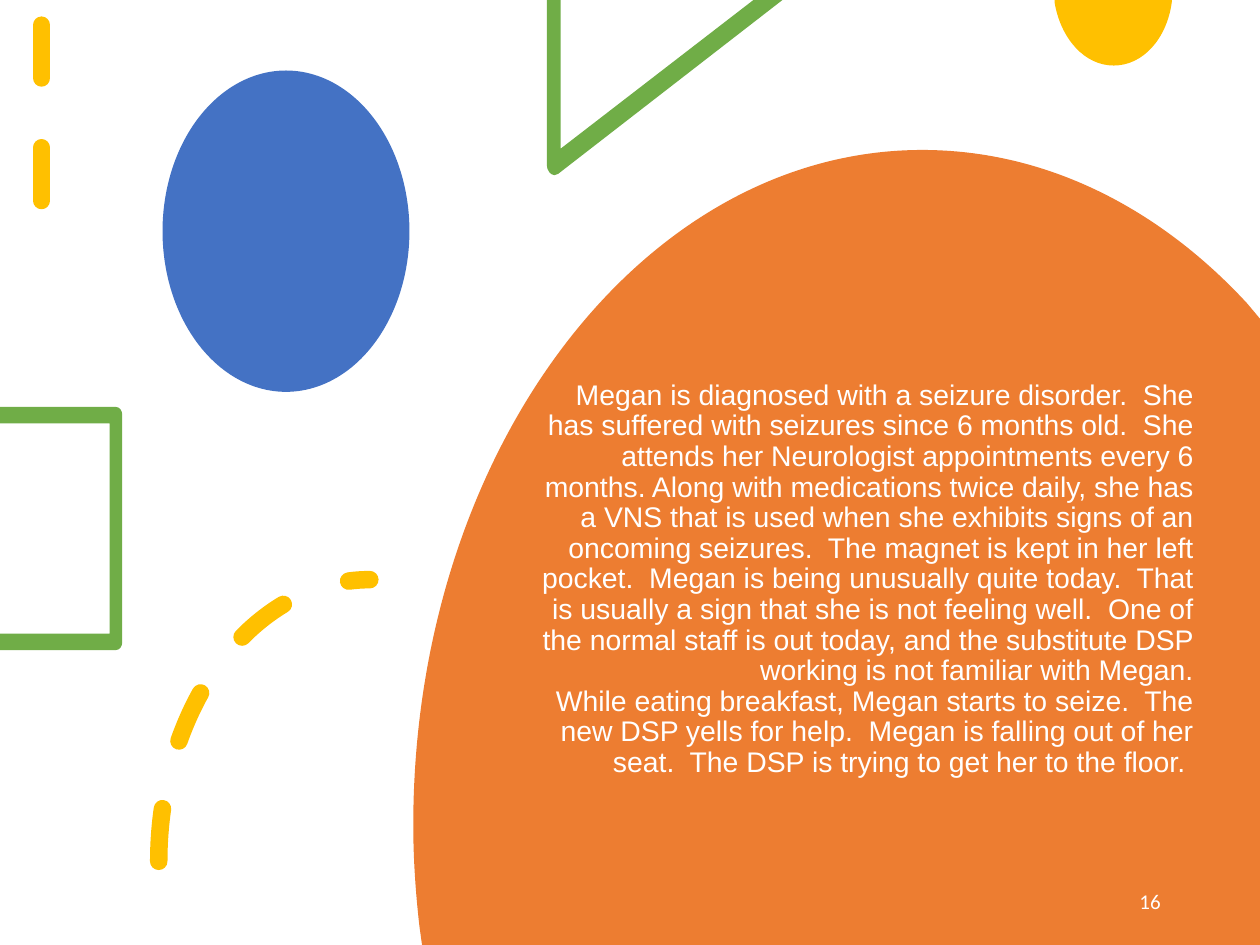
import pptx
import pptx.util
import pptx.dml.color
import pptx.enum.dml
import pptx.enum.shapes
import pptx.enum.text
import pptx.oxml
import pptx.oxml.ns
import lxml.etree

ORANGE = pptx.dml.color.RGBColor(0xED, 0x7D, 0x31)
GOLD = pptx.dml.color.RGBColor(0xFF, 0xC0, 0x00)
GREEN = pptx.dml.color.RGBColor(0x70, 0xAD, 0x47)
BLUE = pptx.dml.color.RGBColor(0x44, 0x72, 0xC4)
WHITE = pptx.dml.color.RGBColor(0xFF, 0xFF, 0xFF)

COLS, ROWS = 100, 75
CELL = pptx.util.Inches(0.1)
KIND = pptx.enum.shapes.MSO_SHAPE
ANCHOR = pptx.enum.text.MSO_ANCHOR

STORY = (
    ("Megan is diagnosed with a seizure disorder.  She has suffered with seizures since 6 months old.  "
     "She attends her Neurologist appointments every 6 months. Along with medications twice daily, "
     "she has a VNS that is used when she exhibits signs of an oncoming seizures.  The magnet is kept "
     "in her left pocket.  Megan is being unusually quite today.  That is usually a sign that she is "
     "not feeling well.  One of the normal staff is out today, and the substitute DSP working is not "
     "familiar with Megan."),
    ("While eating breakfast, Megan starts to seize.  The new DSP yells for help.  Megan is falling "
     "out of her seat.  The DSP is trying to get her to the floor. "),
)

DISC = [(73.2, 11.9), (83, 11.9, 92, 16.5, 99, 24.1), (100, 25.3), (100, 75),
        (33.5, 75), (33.3, 73.6), (33, 71, 32.8, 68.2, 32.8, 65.5),
        (32.8, 35.9, 50.9, 11.9, 73.2, 11.9)]
WEDGE = [(43.4, 0), (44.5, 0), (44.5, 11.8), (59.8, 0), (62.1, 0), (44.3, 13.8),
         (44.2, 13.8, 44.1, 13.9, 44, 13.9), (43.7, 13.9, 43.4, 13.5, 43.4, 13.1)]
DROP = [(83.7, 0), (93, 0), (93, 0.2), (92.6, 3.1, 90.7, 5.2, 88.4, 5.2),
        (86.1, 5.2, 84.2, 3.1, 83.7, 0.2)]
FRAME = [(9.2, 32.3), (0, 32.3), (0, 33.6), (8.7, 33.6), (8.7, 50.3), (0, 50.3),
         (0, 51.6), (9.2, 51.6), (9.5, 51.6, 9.7, 51.3, 9.7, 51),
         (9.7, 32.9), (9.7, 32.6, 9.5, 32.3, 9.2, 32.3)]


def grid(*cells):
    return [round(cell * CELL) for cell in cells]


def paint(shape, color):
    shape.shadow.inherit = False
    shape.fill.solid()
    shape.fill.fore_color.rgb = color
    shape.line.fill.background()


def bend(shape, node, move):
    name = pptx.oxml.ns.qn
    node.tag = name("a:cubicBezTo")
    for child in list(node):
        node.remove(child)
    spots = grid(*move)
    for x, y in zip(spots[::2], spots[1::2]):
        lxml.etree.SubElement(node, name("a:pt"), x=str(x - shape.left), y=str(y - shape.top))


def add_form(slide, start, *moves, color):
    form = slide.shapes.build_freeform(*grid(*start), scale=1.0)
    form.add_line_segments([grid(*move[-2:]) for move in moves], close=True)
    shape = form.convert_to_shape()
    for node, move in zip(shape._element.xpath(".//a:lnTo"), moves):
        if len(move) > 2:
            bend(shape, node, move)
    paint(shape, color)


def add_oval(slide, box, color):
    paint(slide.shapes.add_shape(KIND.OVAL, *grid(*box)), color)


def dash(line):
    line.color.rgb = GOLD
    line.width = pptx.util.Pt(10)
    line.dash_style = pptx.enum.dml.MSO_LINE.DASH
    line._get_or_add_ln().set("cap", "rnd")


def add_line(slide, ends):
    link = slide.shapes.add_connector(pptx.enum.shapes.MSO_CONNECTOR.STRAIGHT, *grid(*ends))
    dash(link.line)
    link._element.spPr.append(pptx.oxml.parse_xml(
        '<a:effectLst xmlns:a="http://schemas.openxmlformats.org/drawingml/2006/main"/>'))


def add_arc(slide, box, turn):
    arc = slide.shapes.add_shape(KIND.ARC, *grid(*box))
    arc.shadow.inherit = False
    arc.fill.background()
    arc.rotation = turn
    dash(arc.line)


def add_text(slide, box, lines, font, size, anchor, space=1.0, foot=0.5):
    frame = slide.shapes.add_textbox(*grid(*box)).text_frame
    frame.word_wrap = True
    frame.vertical_anchor = anchor
    frame.margin_bottom = grid(foot)[0]
    para = frame.paragraphs[0]
    para.alignment = pptx.enum.text.PP_ALIGN.RIGHT
    para.line_spacing = space
    for index, line in enumerate(lines):
        if index:
            para.add_line_break()
        run = para.add_run()
        run.text = line
        run.font.name = font
        run.font.size = pptx.util.Pt(size)
        run.font.color.rgb = WHITE


def main():
    deck = pptx.Presentation()
    deck.slide_width, deck.slide_height = grid(COLS, ROWS)
    slide = deck.slides.add_slide(deck.slide_layouts[6])
    add_form(slide, *DISC, color=ORANGE)
    add_text(slide, (41.7, 41.2, 54, 25.4), STORY, "Arial", 16.2, ANCHOR.BOTTOM, 0.9, 4.8)
    add_line(slide, (3.3, 2, 3.3, 19.5))
    add_form(slide, *WEDGE, color=GREEN)
    add_form(slide, *DROP, color=GOLD)
    add_oval(slide, (12.9, 5.6, 19.6, 25.5), BLUE)
    add_form(slide, *FRAME, color=GREEN)
    add_arc(slide, (7, 51.6, 44.7, 33.5), 270)
    add_text(slide, (83.7, 69.5, 9.4, 4), ["16"], "Calibri", 12, ANCHOR.MIDDLE)
    deck.save("out.pptx")


if __name__ == "__main__":
    main()
